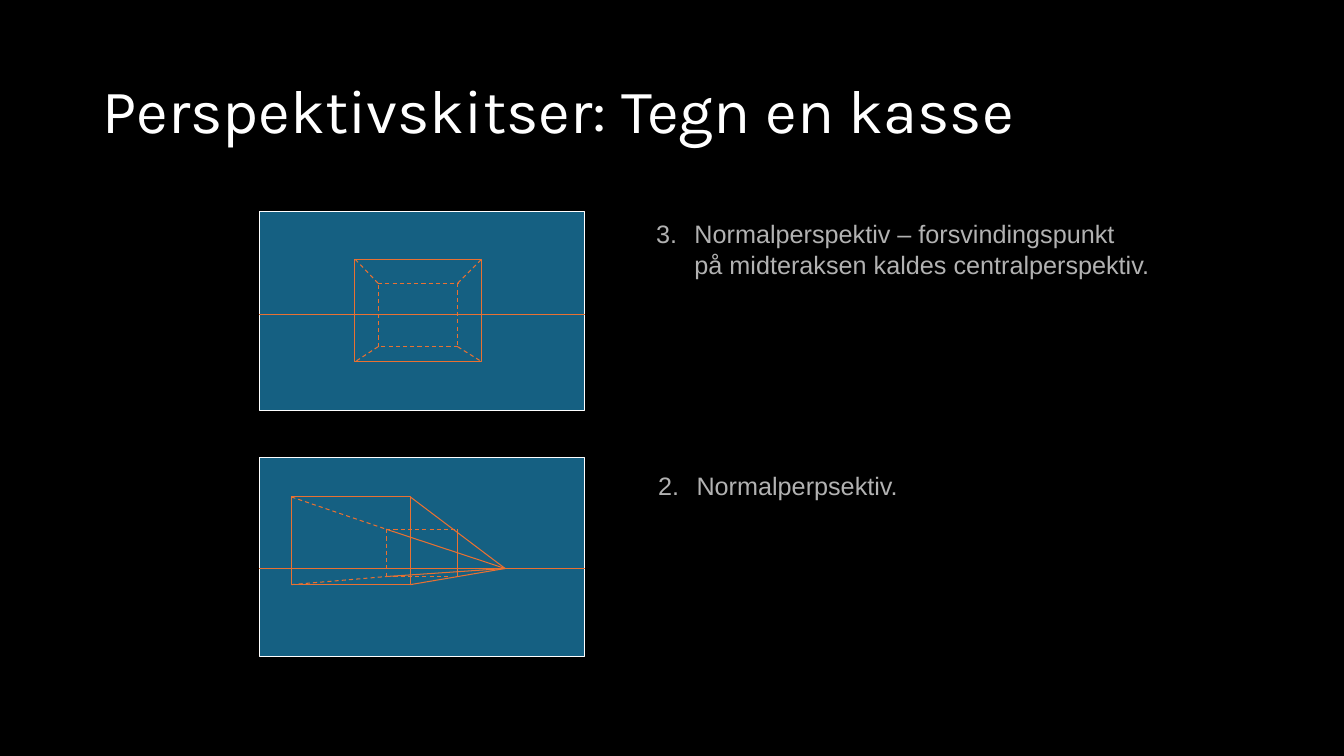
"""Build a slide that shows two perspective sketches of a box."""
import pptx
import pptx.util
import pptx.dml.color
import pptx.enum.dml
import pptx.enum.shapes
import pptx.enum.text
from lxml import etree
from pptx.util import Inches

COLORS = {"background": "000000", "title": "FFFFFF", "note": "B2B2B2",
          "panel": "156082", "frame": "FFFFFF", "sketch": "E97132"}
PANEL_LEFT, PANEL_WIDTH, PANEL_HEIGHT = 2.57, 3.23, 1.97


def rgb(name):
    return pptx.dml.color.RGBColor.from_string(COLORS[name])


def add_rect(slide, left, top, width, height, line, fill=None):
    rect = slide.shapes.add_shape(
        pptx.enum.shapes.MSO_SHAPE.RECTANGLE,
        Inches(left), Inches(top), Inches(width), Inches(height))
    rect.shadow.inherit = False
    if fill:
        rect.fill.solid()
        rect.fill.fore_color.rgb = rgb(fill)
    else:
        rect.fill.background()
    rect.line.color.rgb = rgb(line)
    rect.line.width = pptx.util.Pt(0.75)


def add_edge(slide, start, end, dashed=False):
    edge = slide.shapes.add_connector(
        pptx.enum.shapes.MSO_CONNECTOR.STRAIGHT,
        *(Inches(value) for value in (*start, *end)))
    edge.line.color.rgb = rgb("sketch")
    edge.line.width = pptx.util.Pt(0.75)
    if dashed:
        edge.line.dash_style = pptx.enum.dml.MSO_LINE.DASH
    properties = edge.element.spPr
    etree.SubElement(properties, pptx.oxml.ns.qn("a:effectLst"))


def add_panel(slide, top, horizon):
    add_rect(slide, PANEL_LEFT, top, PANEL_WIDTH, PANEL_HEIGHT, "frame", "panel")
    add_edge(slide, (PANEL_LEFT, horizon), (PANEL_LEFT + PANEL_WIDTH, horizon))


def corners(left, top, right, bottom):
    return [(left, top), (right, top), (right, bottom), (left, bottom)]


def add_run(paragraph, text, size, font, color):
    run = paragraph.add_run()
    run.text = text
    run.font.size = pptx.util.Pt(size)
    run.font.name = font
    run.font.color.rgb = rgb(color)


def add_title(slide, text):
    title = slide.shapes.add_textbox(
        Inches(0.92), Inches(0.4), Inches(11.5), Inches(1.45)).text_frame
    title.word_wrap = True
    title.vertical_anchor = pptx.enum.text.MSO_ANCHOR.MIDDLE
    title.paragraphs[0].line_spacing = 0.9
    add_run(title.paragraphs[0], text, 44, "Karla", "title")


def add_note(slide, left, top, width, number, lines):
    note = slide.shapes.add_textbox(
        Inches(left), Inches(top), Inches(width), Inches(0.7)).text_frame
    note.word_wrap = False
    for index, text in enumerate(lines):
        paragraph = note.paragraphs[0] if index == 0 else note.add_paragraph()
        properties = paragraph._p.get_or_add_pPr()
        properties.set("marL", str(Inches(0.38)))
        properties.set("indent", str(Inches(0 if index else -0.38)))
        if index == 0:
            etree.SubElement(properties, pptx.oxml.ns.qn("a:buFont"), typeface="Arial")
            etree.SubElement(properties, pptx.oxml.ns.qn("a:buAutoNum"),
                             type="arabicPeriod", startAt=str(number))
        add_run(paragraph, text, 18, "Arial", "note")


def add_central_sketch(slide):
    add_panel(slide, 2.1, 3.12)
    add_rect(slide, 3.52, 2.57, 1.26, 1.02, "sketch")
    front = corners(3.52, 2.57, 4.78, 3.59)
    back = corners(3.75, 2.81, 4.54, 3.44)
    for index, corner in enumerate(back):
        add_edge(slide, corner, front[index], dashed=True)
        add_edge(slide, corner, back[(index + 1) % 4], dashed=True)


def add_side_sketch(slide):
    vanishing_point = (5.01, 5.64)
    add_panel(slide, 4.54, vanishing_point[1])
    add_rect(slide, 2.89, 4.93, 1.18, 0.87, "sketch")
    front = corners(2.89, 4.93, 4.07, 5.8)
    back = corners(3.83, 5.25, 4.54, 5.72)
    for corner in (front[1], front[2], back[0], back[3]):
        add_edge(slide, corner, vanishing_point)
    for index in (0, 3):
        add_edge(slide, front[index], back[index], dashed=True)
    add_edge(slide, back[0], back[3], dashed=True)
    add_edge(slide, back[3], (4.46, 5.72), dashed=True)
    add_edge(slide, back[0], back[1], dashed=True)
    add_edge(slide, back[1], back[2])


def main():
    deck = pptx.Presentation()
    deck.slide_width, deck.slide_height = Inches(13.33), Inches(7.5)
    slide = deck.slides.add_slide(deck.slide_layouts[6])
    slide.background.fill.solid()
    slide.background.fill.fore_color.rgb = rgb("background")
    add_title(slide, "Perspektivskitser: Tegn en kasse")
    add_central_sketch(slide)
    add_note(slide, 6.41, 2.12, 5.1, 3,
             ["Normalperspektiv – forsvindingspunkt",
              "på midteraksen kaldes centralperspektiv."])
    add_side_sketch(slide)
    add_note(slide, 6.43, 4.62, 2.59, 2, ["Normalperpsektiv."])
    deck.save("out.pptx")


if __name__ == "__main__":
    main()
